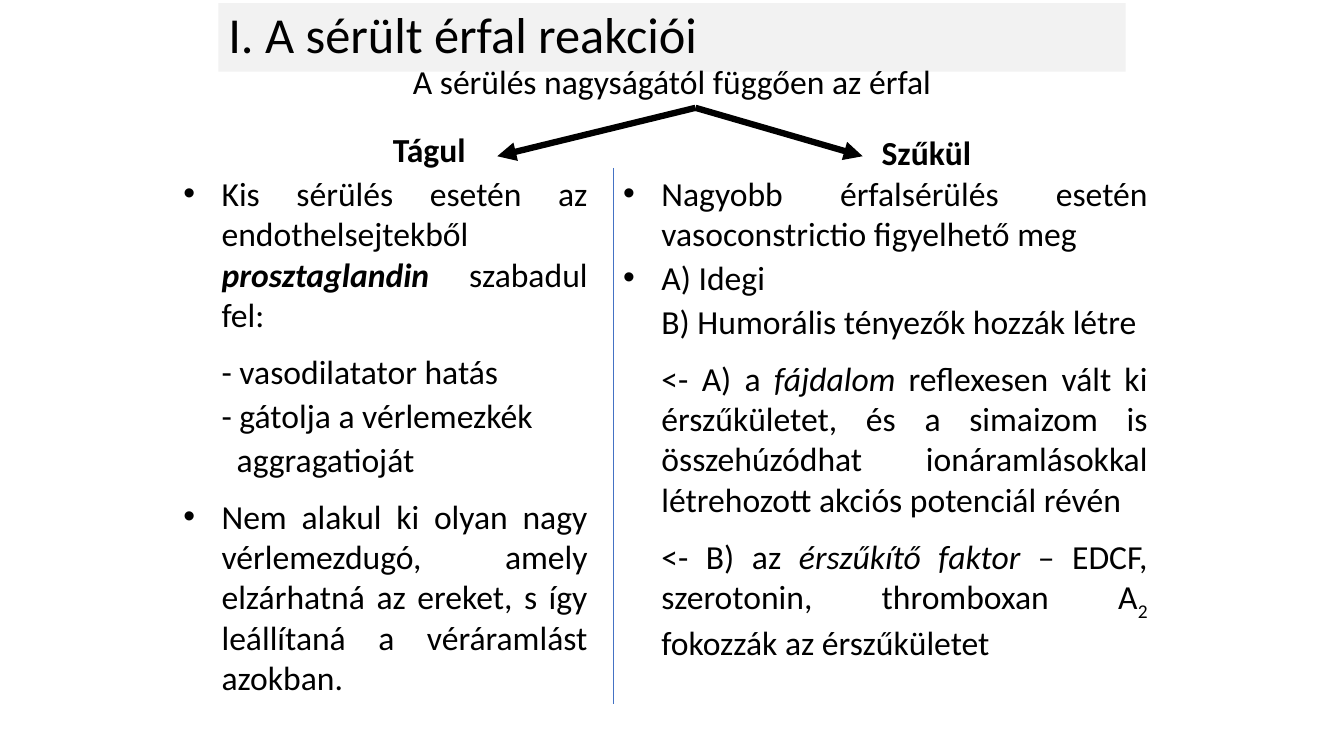
import pptx
import pptx.util
import pptx.dml.color
import pptx.enum.shapes
import pptx.enum.text
import pptx.oxml
import pptx.oxml.ns

RGB = pptx.dml.color.RGBColor
ALIGN = pptx.enum.text.PP_ALIGN
ANCHOR = pptx.enum.text.MSO_ANCHOR
AUTO = pptx.enum.text.MSO_AUTO_SIZE


class Theme:
    ink = RGB.from_string("000000")
    band = RGB.from_string("F2F2F2")
    rule = RGB.from_string("4472C4")
    font = "Calibri"
    title = pptx.util.Pt(36)
    body = pptx.util.Pt(24)
    wide_gap = pptx.util.Pt(12)
    small_gap = pptx.util.Pt(2.4)
    arrow_line = pptx.util.Pt(4.5)
    rule_line = pptx.util.Pt(0.5)
    indent = pptx.util.Inches(0.38)
    deep_indent = pptx.util.Inches(0.53)


def assign(target, values):
    for name, value in values.items():
        setattr(target, name, value)


def sub_element(parent, tag, **attributes):
    element = pptx.oxml.parse_xml(f"<{tag} {pptx.oxml.ns.nsdecls('a')}/>")
    for name, value in attributes.items():
        element.set(name, value)
    parent.append(element)


class Deck:
    columns, rows = 160, 90

    def __init__(self, theme):
        self.theme = theme
        self.prs = pptx.Presentation()
        assign(self.prs, {"slide_width": pptx.util.Inches(13.33),
                          "slide_height": pptx.util.Inches(7.5)})
        self.s = self.prs.slides.add_slide(self.prs.slide_layouts[6])

    def grid(self, *cells):
        steps = (self.prs.slide_width / self.columns, self.prs.slide_height / self.rows)
        return [round(cell * steps[i % 2]) for i, cell in enumerate(cells)]

    def band(self, area, text, **format):
        sp = self.s.shapes.add_shape(pptx.enum.shapes.MSO_SHAPE.RECTANGLE, *self.grid(*area))
        sp.shadow.inherit = False
        sp.fill.solid()
        sp.fill.fore_color.rgb = self.theme.band
        sp.line.fill.background()
        assign(sp.text_frame, {"word_wrap": True, "vertical_anchor": ANCHOR.MIDDLE})
        self.add_runs(sp.text_frame.paragraphs[0], [(text, format)],
                      {"alignment": ALIGN.LEFT, "line_spacing": 0.9})

    def label(self, area, text, spacing=1.0, **format):
        tf = self.box(area)
        self.add_runs(tf.paragraphs[0], [(text, format)],
                      {"alignment": ALIGN.CENTER, "line_spacing": spacing})

    def column(self, area, paragraphs):
        tf = self.box(area)
        for i, (bullet, indent, gap, runs) in enumerate(paragraphs):
            p = tf.add_paragraph() if i else tf.paragraphs[0]
            self.add_runs(p, runs, {"alignment": ALIGN.JUSTIFY, "space_before": gap})
            pPr = p._p.get_or_add_pPr()
            pPr.set("marL", str(indent))
            pPr.set("indent", str(-indent if bullet else 0))
            if bullet:
                sub_element(pPr, "a:buFont", typeface="Arial")
                sub_element(pPr, "a:buChar", char="•")
            else:
                sub_element(pPr, "a:buNone")

    def box(self, area):
        tf = self.s.shapes.add_textbox(*self.grid(*area)).text_frame
        assign(tf, {"word_wrap": True, "auto_size": AUTO.SHAPE_TO_FIT_TEXT})
        return tf

    def add_runs(self, p, runs, layout):
        assign(p, layout)
        for text, format in runs:
            r = p.add_run()
            r.text = text
            format = dict(format)
            baseline = format.pop("baseline", None)
            assign(r.font, {"name": self.theme.font, "size": self.theme.body, **format})
            r.font.color.rgb = self.theme.ink
            if baseline:
                r._r.get_or_add_rPr().set("baseline", baseline)

    def line(self, start, end, color, width, arrow=False):
        sp = self.s.shapes.add_connector(pptx.enum.shapes.MSO_CONNECTOR.STRAIGHT,
                                         *self.grid(*start, *end))
        sp.line.color.rgb = color
        sp.line.width = width
        if arrow:
            sub_element(sp.line._get_or_add_ln(), "a:tailEnd", type="triangle")
        sub_element(sp._element.spPr, "a:effectLst")


def main():
    t = Theme()
    deck = Deck(t)
    deck.band((26, 0.36, 108, 8.16), "I. A sérült érfal reakciói", size=t.title)
    deck.label((26, 7.2, 108, 6.6), "A sérülés nagyságától függően az érfal", 0.9)
    deck.label((22.3, 14.8, 57.6, 6), "Tágul", bold=True)
    deck.label((82.4, 15.1, 55.8, 6), "Szűkül", bold=True)

    for tip in ((59.2, 18.6), (102.7, 18.6)):
        deck.line((82.8, 12.84), tip, t.ink, t.arrow_line, arrow=True)

    deck.column((20.64, 20, 50.5, 70), [
        (True, t.indent, 0, [("Kis sérülés esetén az endothelsejtekből ", {}),
                             ("prosztaglandin", {"bold": True, "italic": True}),
                             (" szabadul fel:", {})]),
        (False, t.indent, t.wide_gap, [("- vasodilatator hatás", {})]),
        (False, t.indent, t.small_gap, [("- gátolja a vérlemezkék", {})]),
        (False, t.deep_indent, t.small_gap, [("aggragatioját", {})]),
        (True, t.indent, t.wide_gap, [
            ("Nem alakul ki olyan nagy vérlemezdugó, amely elzárhatná az ereket, "
             "s így leállítaná a véráramlást azokban.", {})]),
    ])
    deck.column((73, 20, 64.8, 60), [
        (True, t.indent, 0, [("Nagyobb érfalsérülés esetén vasoconstrictio figyelhető meg", {})]),
        (True, t.indent, t.small_gap, [("A) Idegi", {})]),
        (False, t.indent, t.small_gap, [("B) Humorális tényezők hozzák létre", {})]),
        (False, t.indent, t.wide_gap, [
            ("<- A) a ", {}), ("fájdalom", {"italic": True}),
            (" reflexesen vált ki érszűkületet, és a simaizom is összehúzódhat "
             "ionáramlásokkal létrehozott akciós potenciál révén", {})]),
        (False, t.indent, t.wide_gap, [
            ("<- B) az ", {}), ("érszűkítő faktor", {"italic": True}),
            (" – EDCF, szerotonin, thromboxan A", {}), ("2", {"baseline": "-25000"}),
            (" fokozzák az érszűkületet", {})]),
    ])
    deck.line((73, 20), (73, 83.8), t.rule, t.rule_line)
    deck.prs.save("out.pptx")


if __name__ == "__main__":
    main()
